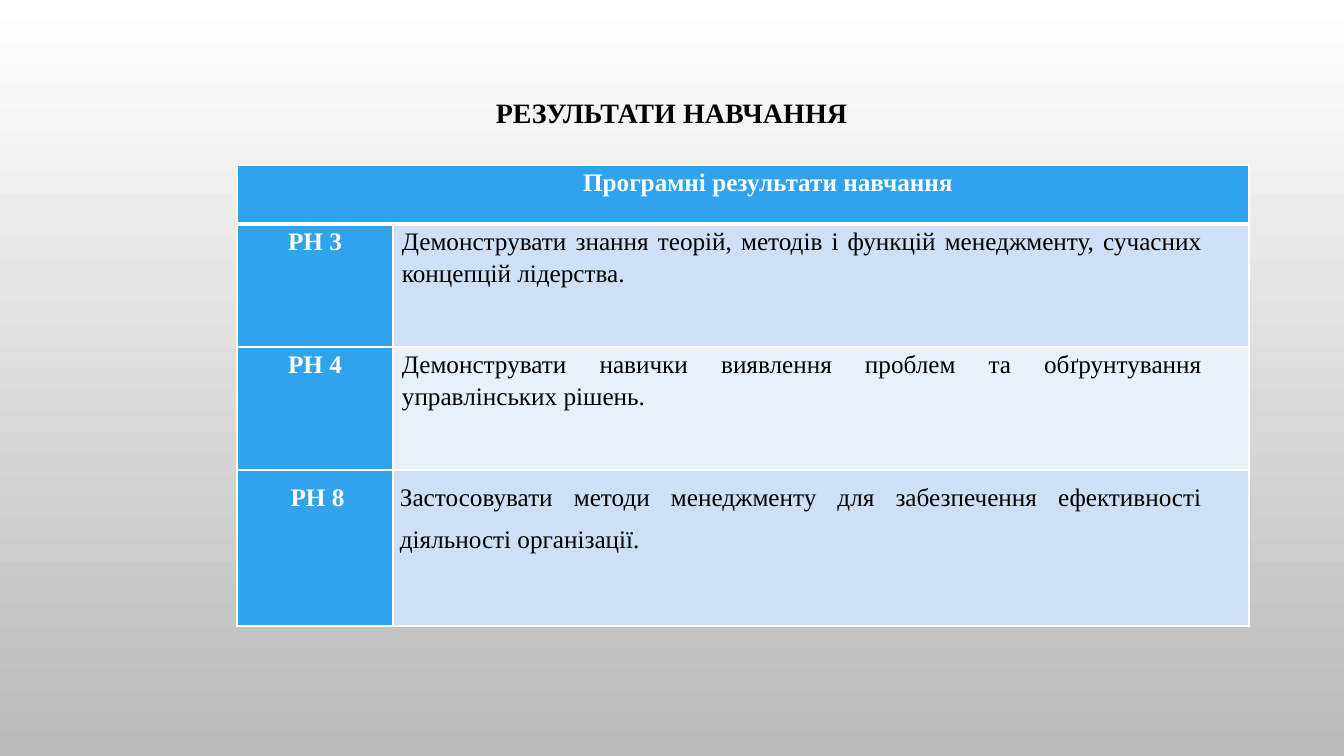
from pptx import Presentation
from pptx.dml.color import RGBColor
from pptx.enum.text import MSO_ANCHOR, PP_ALIGN as Align
from pptx.oxml import parse_xml
from pptx.oxml.ns import nsdecls
from pptx.util import Pt

SCALE = 914400 / 100.8
COLORS = {
    "white": "FFFFFF",
    "black": "000000",
    "gray": "B9B9B9",
    "blue": "2FA3EE",
    "band": "CDE0F8",
    "light_band": "E8F0FC",
}
OUTCOMES = [
    ("РН 3", "Демонструвати знання теорій, методів і функцій менеджменту, сучасних концепцій лідерства.", 1.15),
    ("РН 4", "Демонструвати навички виявлення проблем та обґрунтування управлінських рішень.", 1.15),
    ("РН 8", "Застосовувати методи менеджменту для забезпечення ефективності діяльності організації.", 1.5),
]
COLUMN_WIDTHS = [156, 856]
ROW_HEIGHTS = [59, 123, 123, 156]


def px(value):
    return round(value * SCALE)


def write(text_frame, text, size, color, bold, align, spacing=1.0):
    text_frame.text = text
    text_frame.word_wrap = True
    paragraph = text_frame.paragraphs[0]
    paragraph.alignment = align
    paragraph.line_spacing = spacing
    font = paragraph.runs[0].font
    font.name = "Times New Roman"
    font.size = Pt(size)
    font.bold = bold
    font.color.rgb = RGBColor.from_string(COLORS[color])


presentation = Presentation()
presentation.slide_width = px(1344)
presentation.slide_height = px(756)
slide = presentation.slides.add_slide(presentation.slide_layouts[6])

background = slide.background.fill
background.gradient()
background.gradient_angle = 270
for stop, position, color in zip(background.gradient_stops, (0, 1), ("white", "gray")):
    stop.position = position
    stop.color.rgb = RGBColor.from_string(COLORS[color])

table = slide.shapes.add_table(
    len(ROW_HEIGHTS), len(COLUMN_WIDTHS), px(237), px(165), px(sum(COLUMN_WIDTHS)), px(sum(ROW_HEIGHTS))
).table
for column, width in zip(table.columns, COLUMN_WIDTHS):
    column.width = px(width)
for row, height in zip(table.rows, ROW_HEIGHTS):
    row.height = px(height)

for row_index in range(len(ROW_HEIGHTS)):
    for column_index in range(len(COLUMN_WIDTHS)):
        cell = table.cell(row_index, column_index)
        cell.margin_left = cell.margin_right = px(7)
        cell.margin_top = cell.margin_bottom = 0
        properties = cell._tc.get_or_add_tcPr()
        for side in "LRTB":
            below_header = (row_index, side) in ((0, "B"), (1, "T"))
            properties.append(parse_xml(
                f'<a:ln{side} {nsdecls("a")} w="{Pt(3 if below_header else 1)}"><a:solidFill>'
                f'<a:srgbClr val="{COLORS["white"]}"/></a:solidFill></a:ln{side}>'
            ))
        if row_index == 0 or column_index == 0:
            fill = "blue"
        else:
            fill = "band" if row_index % 2 else "light_band"
        cell.fill.solid()
        cell.fill.fore_color.rgb = RGBColor.from_string(COLORS[fill])

header = table.cell(0, 0)
header.merge(table.cell(0, 1))
header.margin_left = px(57)
write(header.text_frame, "Програмні результати навчання", 18, "white", True, Align.CENTER, 1.15)

for row_index, (code, outcome, spacing) in enumerate(OUTCOMES, 1):
    code_cell, outcome_cell = table.cell(row_index, 0), table.cell(row_index, 1)
    code_cell.margin_left = px(7 if spacing < 1.5 else 12)
    outcome_cell.margin_left = px(9 if spacing < 1.5 else 7)
    outcome_cell.margin_right = px(47)
    write(code_cell.text_frame, code, 18, "white", True, Align.CENTER, spacing)
    write(outcome_cell.text_frame, outcome, 18, "black", False, Align.JUSTIFY, spacing)

title = slide.shapes.add_textbox(px(419), px(87), px(505), px(78)).text_frame
title.vertical_anchor = MSO_ANCHOR.TOP
title.margin_top = px(8)
write(title, "РЕЗУЛЬТАТИ НАВЧАННЯ", 20, "black", True, Align.CENTER)

presentation.save("out.pptx")
